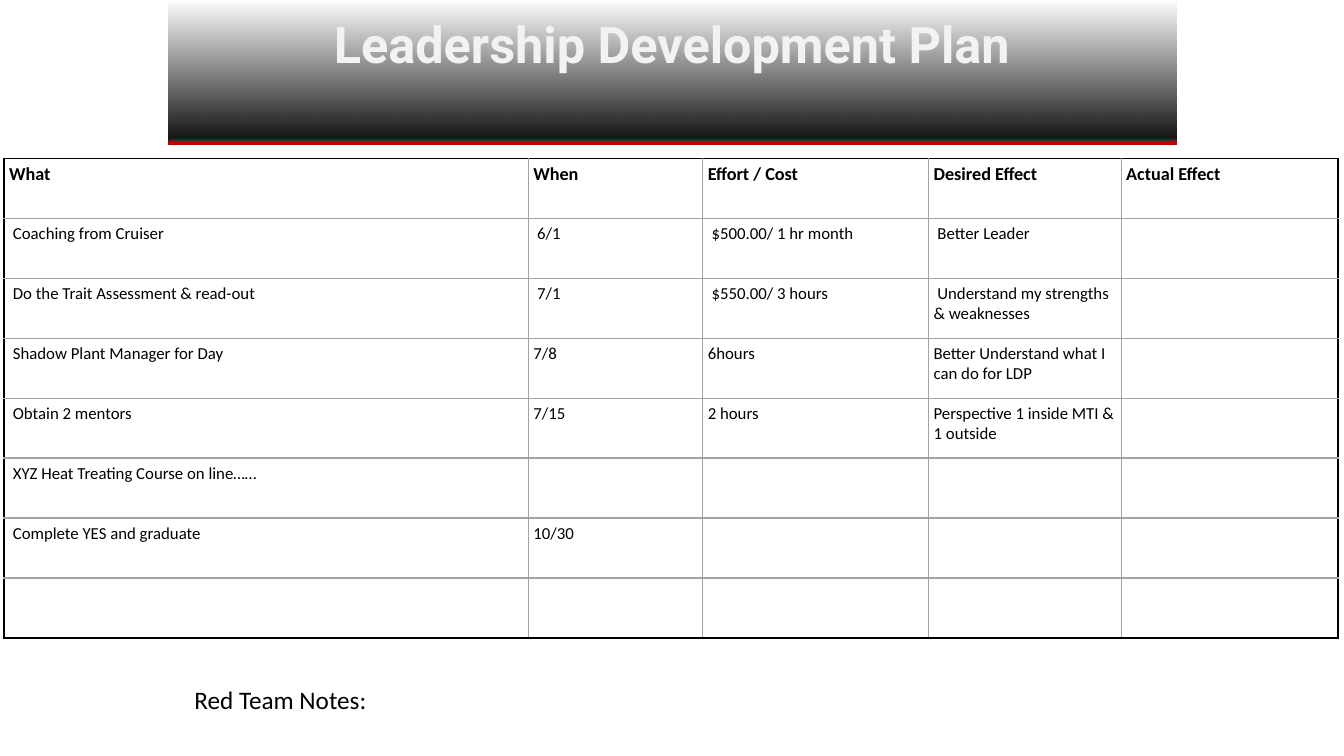
from lxml import etree
from pptx import Presentation, util as u
from pptx.dml.color import RGBColor
from pptx.enum import shapes, text
from pptx.oxml.ns import qn

# Content
TITLE = "Leadership Development Plan"
NOTES = "Red Team Notes:"
PLAN = [
    ("What", "When", "Effort / Cost", "Desired Effect", "Actual Effect"),
    (" Coaching from Cruiser", " 6/1", " $500.00/ 1 hr month", " Better Leader", ""),
    (" Do the Trait Assessment & read-out", " 7/1", " $550.00/ 3 hours",
     " Understand my strengths & weaknesses", ""),
    (" Shadow Plant Manager for Day", "7/8", "6hours",
     "Better Understand what I can do for LDP", ""),
    (" Obtain 2 mentors", "7/15", "2 hours", "Perspective 1 inside MTI & 1 outside", ""),
    (" XYZ Heat Treating Course on line……", "", "", "", ""),
    (" Complete YES and graduate", "10/30", "", "", ""),
    ("", "", "", "", ""),
]
COLUMN_WIDTHS = (5.2, 1.73, 2.24, 1.91, 2.15)
TABLE_HEIGHT = 4.76
COLORS = {"banner": "0D0D0D", "rule": "C00000", "title": "F2F2F2", "text": "000000",
          "frame": "000000", "grid": "A3A3A3", "glow": "FFFFFF"}


def color(name):
    return RGBColor.from_string(COLORS[name])


def add_span(para, words, size, font, tint, bold=False):
    span = para.add_run()
    span.text = words
    span.font.size = u.Pt(size)
    span.font.name = font
    span.font.bold = bold
    span.font.color.rgb = color(tint)


def add_color(parent, name, alpha):
    node = etree.SubElement(parent, qn("a:srgbClr"), val=COLORS[name])
    etree.SubElement(node, qn("a:alpha"), val=str(alpha * 1000))


def add_text_box(slide, area, wrap):
    box = slide.shapes.add_textbox(*map(u.Inches, area))
    box.text_frame.word_wrap = wrap
    box.text_frame.auto_size = text.MSO_AUTO_SIZE.SHAPE_TO_FIT_TEXT
    return box.text_frame.paragraphs[0]


def add_borders(cell, sides):
    properties = cell._tc.get_or_add_tcPr()
    for index, (side, on_edge) in enumerate(sides):
        line = etree.Element(qn("a:" + side), w=str(u.Pt(1)))
        fill = etree.SubElement(line, qn("a:solidFill"))
        add_color(fill, "frame" if on_edge else "grid", 100)
        properties.insert(index, line)


def add_banner(slide):
    banner = slide.shapes.add_shape(shapes.MSO_SHAPE.RECTANGLE, u.Inches(1.67), 0,
                                    u.Inches(10), u.Inches(1.4))
    banner.shadow.inherit = False
    banner.line.fill.background()
    banner.fill.gradient()
    banner.fill.gradient_angle = 270
    # Fade from clear at the top to solid at the bottom
    for stop, alpha in zip(banner.fill._fill._gradFill.gsLst, (0, 100)):
        for child in list(stop):
            stop.remove(child)
        add_color(stop, "banner", alpha)

    rule = slide.shapes.add_connector(shapes.MSO_CONNECTOR.STRAIGHT, u.Inches(1.67),
                                      u.Inches(1.42), u.Inches(11.67), u.Inches(1.42))
    rule.line.color.rgb = color("rule")
    rule.line.width = u.Pt(3)
    effects = etree.SubElement(rule._element.spPr, qn("a:effectLst"))
    shadow = etree.SubElement(effects, qn("a:outerShdw"), blurRad=str(u.Pt(2)), dist="0", dir="0")
    add_color(shadow, "glow", 40)

    para = add_text_box(slide, (2.33, 0.08, 8.67, 1.31), True)
    para.alignment = text.PP_ALIGN.CENTER
    add_span(para, TITLE, 36, "Roboto", "title", True)


def add_plan(slide):
    row_count, column_count = len(PLAN), len(COLUMN_WIDTHS)
    table = slide.shapes.add_table(row_count, column_count, u.Inches(0.04), u.Inches(1.57),
                                   u.Inches(sum(COLUMN_WIDTHS)), u.Inches(TABLE_HEIGHT)).table
    table.first_row = table.horz_banding = False
    for column, width in zip(table.columns, COLUMN_WIDTHS):
        column.width = u.Inches(width)
    for r, row in enumerate(PLAN):
        table.rows[r].height = u.Inches(TABLE_HEIGHT / row_count)
        for c, words in enumerate(row):
            cell = table.cell(r, c)
            cell.fill.background()
            cell.margin_left = cell.margin_right = u.Inches(0.05)
            cell.margin_top = cell.margin_bottom = u.Inches(0.05)
            add_borders(cell, (("lnL", c == 0), ("lnR", c == column_count - 1),
                               ("lnT", r == 0), ("lnB", r == row_count - 1)))
            if words:
                add_span(cell.text_frame.paragraphs[0], words, 13 if r == 0 else 12,
                         "Calibri", "text", r == 0)


def main():
    deck = Presentation()
    deck.slide_width, deck.slide_height = u.Inches(13.33), u.Inches(7.5)
    page = deck.slides.add_slide(deck.slide_layouts[6])
    add_banner(page)
    add_plan(page)
    # Notes label under the table
    add_span(add_text_box(page, (1.83, 6.74, 1.96, 0.4), False), NOTES, 18, "Calibri", "text")
    deck.save("out.pptx")


if __name__ == "__main__":
    main()
